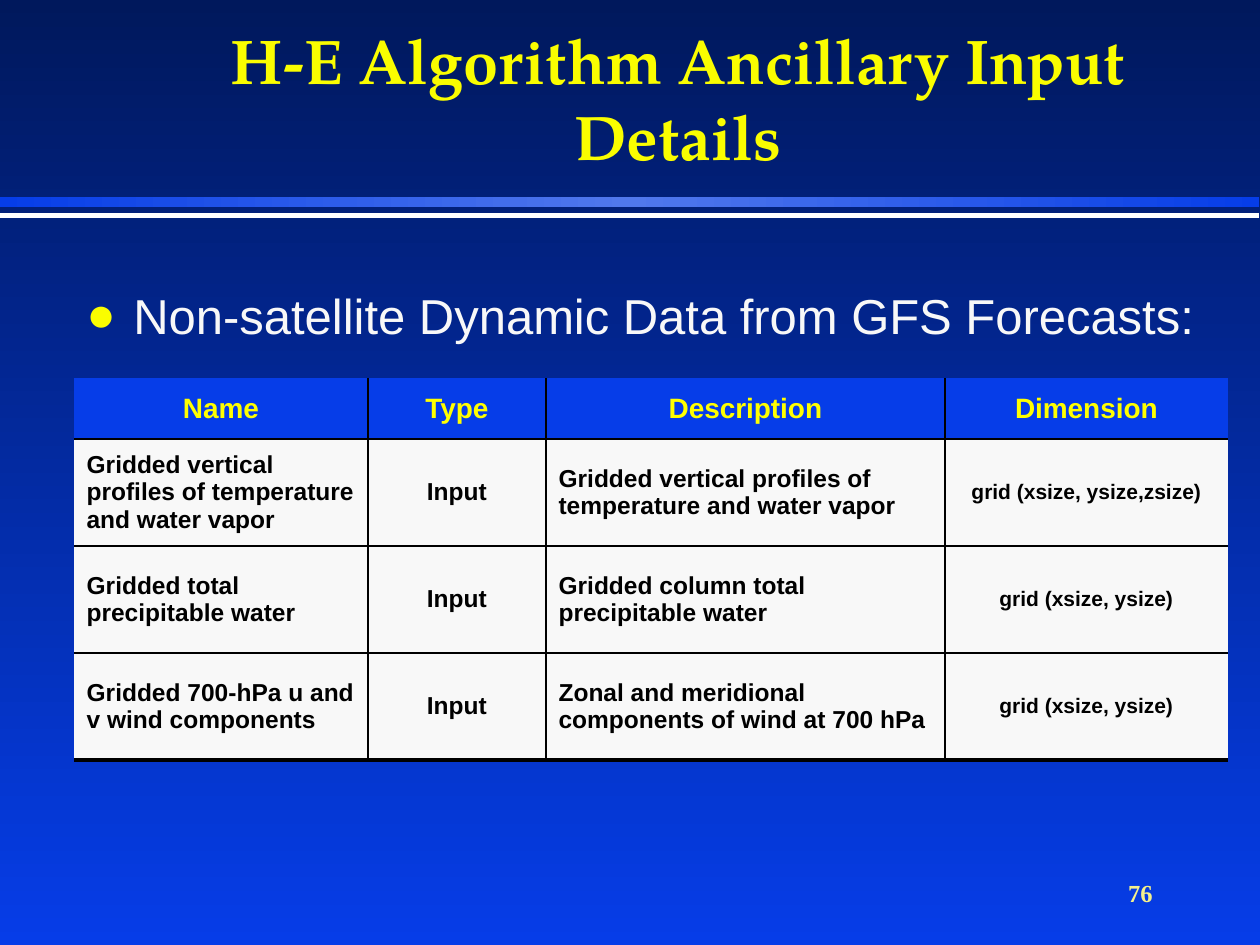
from copy import deepcopy

from lxml.etree import SubElement
from pptx import Presentation
from pptx.dml.color import RGBColor
from pptx.enum.shapes import MSO_SHAPE as Shape
from pptx.enum.text import MSO_ANCHOR as Anchor, MSO_AUTO_SIZE as AutoSize, PP_ALIGN as Align
from pptx.oxml.ns import qn
from pptx.util import Emu, Pt

COLORS = {
    "night": "00185C", "blue": "063DE8", "glow": "5078EC", "title": "FAFD00",
    "header": "FFFF00", "number": "F4F08C", "light": "F8F8F8",
    "white": "FFFFFF", "black": "000000",
}
HEADERS = ["Name", "Type", "Description", "Dimension"]
INPUTS = [
    ["Gridded vertical profiles of temperature and water vapor", "Input",
     "Gridded vertical profiles of temperature and water vapor", "grid (xsize, ysize,zsize)"],
    ["Gridded total precipitable water", "Input",
     "Gridded column total precipitable water", "grid (xsize, ysize)"],
    ["Gridded 700-hPa u and v wind components", "Input",
     "Zonal and meridional components of wind at 700 hPa", "grid (xsize, ysize)"],
]
COLUMN_ALIGN = [Align.LEFT, Align.CENTER, Align.LEFT, Align.CENTER]
COLUMN_SIZE = [14, 14, 14, 12]


def px(length):
    return Emu(round(length * 914400 / 126))


def color(name):
    return RGBColor.from_string(COLORS[name])


class SlideBuilder:
    def __init__(self, deck):
        self.page = deck.slides.add_slide(deck.slide_layouts[5])

    def gradient(self, owner, fill, names, angle):
        fill.gradient()
        fill.gradient_angle = angle
        stop_list = owner.find(".//" + qn("a:gsLst"))
        while len(stop_list) < len(names):
            stop_list.append(deepcopy(stop_list[0]))
        for index, (stop, name) in enumerate(zip(fill.gradient_stops, names)):
            stop.color.rgb = color(name)
            stop.position = index / (len(names) - 1)

    def background(self, names):
        self.gradient(self.page.element, self.page.background.fill, names, 270)

    def bar(self, top, height, names):
        bar = self.page.shapes.add_shape(Shape.RECTANGLE, 0, px(top), px(1259), px(height))
        bar.shadow.inherit = False
        bar.line.fill.background()
        if len(names) > 1:
            self.gradient(bar.element, bar.fill, names, 0)
        else:
            bar.fill.solid()
            bar.fill.fore_color.rgb = color(names[0])

    def add_span(self, para, text, size, tint, font="Arial", bold=True, align=Align.LEFT):
        para.alignment = align
        span = para.add_run()
        span.text = text
        span.font.name, span.font.size, span.font.bold = font, Pt(size), bold
        span.font.color.rgb = color(tint)

    def title(self, text, left, top, width, height):
        box = self.page.shapes.title
        box.left, box.top, box.width, box.height = map(px, (left, top, width, height))
        frame = box.text_frame
        frame.auto_size, frame.word_wrap = AutoSize.NONE, True
        frame.vertical_anchor = Anchor.BOTTOM
        self.add_span(frame.paragraphs[0], text, 36, "title", "TeX Gyre Pagella",
                      align=Align.CENTER)

    def text(self, text, left, top, width, height, size, tint, anchor=Anchor.TOP,
             bullet=False, **style):
        box = self.page.shapes.add_textbox(*map(px, (left, top, width, height)))
        frame = box.text_frame
        frame.word_wrap, frame.vertical_anchor = True, anchor
        para = frame.paragraphs[0]
        if bullet:
            self.bullet(para, 47)
        self.add_span(para, text, size, tint, **style)

    def bullet(self, para, indent):
        props = para._p.get_or_add_pPr()
        props.set("marL", str(px(indent)))
        props.set("indent", str(-px(indent)))
        tint = SubElement(props, qn("a:buClr"))
        SubElement(tint, qn("a:srgbClr"), val=COLORS["title"])
        SubElement(props, qn("a:buFont"), typeface="Arial")
        SubElement(props, qn("a:buChar"), char="●")

    def table(self, left, top, widths, heights, rows):
        frame = self.page.shapes.add_table(len(rows), len(widths), px(left), px(top),
                                           px(sum(widths)), px(sum(heights)))
        table = frame.table
        table.horz_banding = False
        for column, width in zip(table.columns, widths):
            column.width = px(width)
        for row, height in zip(table.rows, heights):
            row.height = px(height)
        last_row, last_col = len(rows) - 1, len(widths) - 1
        for r, row in enumerate(rows):
            for c, text in enumerate(row):
                cell = table.cell(r, c)
                cell.vertical_anchor = Anchor.MIDDLE
                cell.fill.solid()
                cell.fill.fore_color.rgb = color("light" if r else "blue")
                para = cell.text_frame.paragraphs[0]
                if r:
                    self.add_span(para, text, COLUMN_SIZE[c], "black", align=COLUMN_ALIGN[c])
                else:
                    self.add_span(para, text, 16, "header", align=Align.CENTER)
                self.borders(cell, {"L": 1 if c else 0, "R": 1 if c < last_col else 0,
                                    "T": 1 if r else 0, "B": 1 if r < last_row else 2.25})

    def borders(self, cell, widths):
        props = cell._tc.get_or_add_tcPr()
        for index, (side, width) in enumerate(widths.items()):
            line = SubElement(props, qn("a:ln" + side), w=str(Pt(width)))
            if width:
                fill = SubElement(line, qn("a:solidFill"))
                SubElement(fill, qn("a:srgbClr"), val=COLORS["black"])
            else:
                SubElement(line, qn("a:noFill"))
            props.insert(index, line)


def main():
    deck = Presentation()
    deck.slide_width, deck.slide_height = px(1260), px(945)
    slide = SlideBuilder(deck)

    # Background and header rules
    slide.background(["night", "blue"])
    slide.bar(197, 10, ["blue", "glow", "blue"])
    slide.bar(213, 5, ["white"])

    # Title, lead bullet and page number
    slide.title("H-E Algorithm Ancillary Input Details", 179, 21, 998, 158)
    slide.text("Non-satellite Dynamic Data from GFS Forecasts:", 74, 279, 1144, 110,
               28, "light", bullet=True, bold=False)
    slide.text("76", 903, 861, 262, 63, 14, "number", anchor=Anchor.MIDDLE,
               font="Times New Roman", align=Align.RIGHT)

    # Ancillary inputs
    slide.table(74, 378, [294, 178, 399, 283], [61] + [107] * len(INPUTS), [HEADERS] + INPUTS)

    deck.save("out.pptx")


if __name__ == "__main__":
    main()
